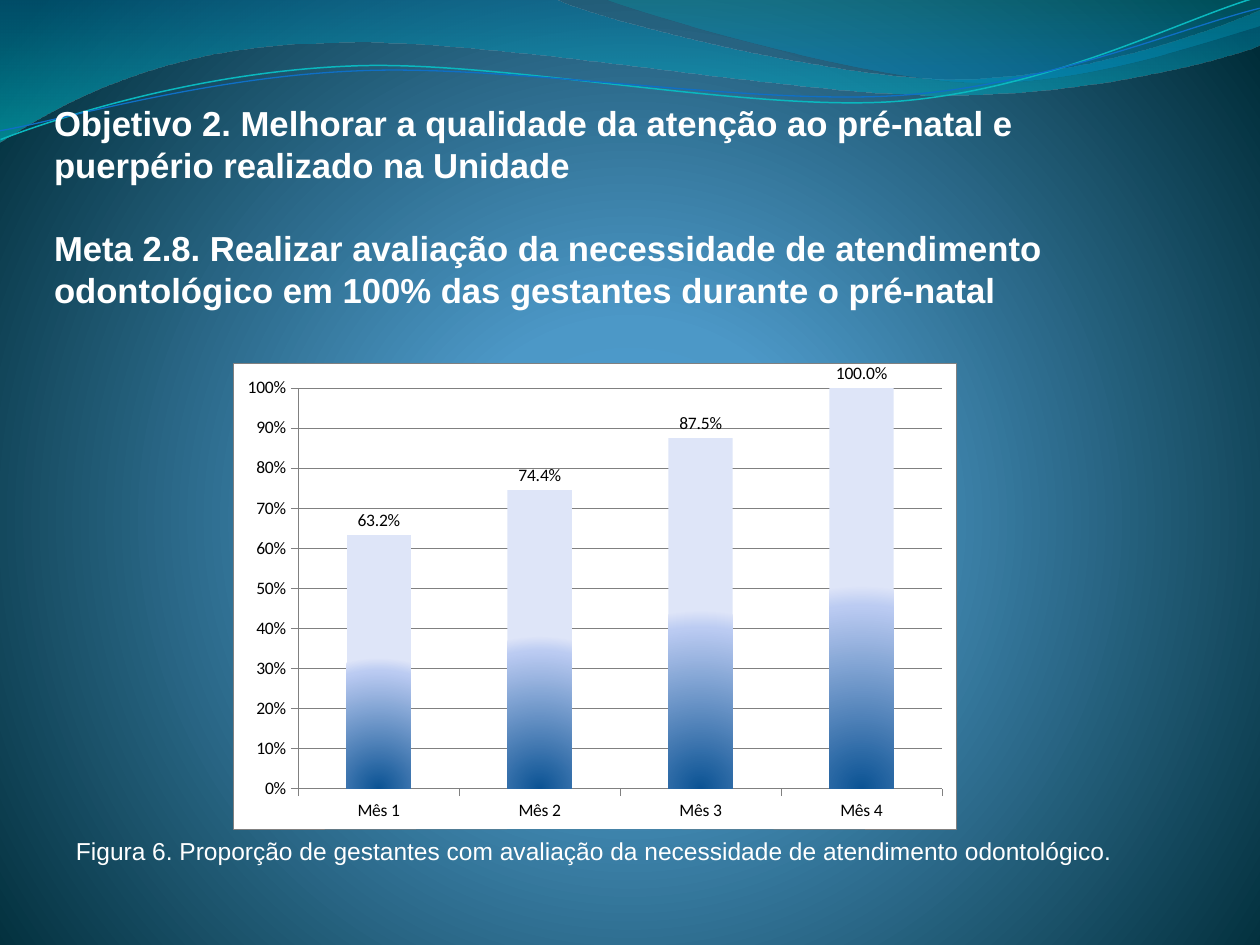
from lxml import etree
from pptx import Presentation
from pptx import util as u
from pptx.chart.data import CategoryChartData
from pptx.dml.color import RGBColor
from pptx.enum import chart as ch, text
from pptx.oxml import parse_xml
from pptx.oxml.ns import nsdecls, qn

WHITE = RGBColor(0xFF, 0xFF, 0xFF)
BLACK = RGBColor(0, 0, 0)
GRAY = RGBColor(0x80, 0x80, 0x80)
CYAN = RGBColor(0x0A, 0xB8, 0xBF)
BLUE = RGBColor(0x0F, 0x6F, 0xC6)

# Gradient stops: position %, colour, opacity %
BACKDROP = [(0, RGBColor(0x4A, 0xA0, 0xD6), 100), (25, RGBColor(0x4C, 0x98, 0xC7), 100),
            (100, RGBColor(0x00, 0x2C, 0x38), 100)]
LEFT_TINT = [(0, RGBColor(0x00, 0x74, 0xA1), 45), (100, RGBColor(0x00, 0xC6, 0xCF), 55)]
RIGHT_TINT = [(0, RGBColor(0x00, 0xA1, 0xA9), 30), (80, RGBColor(0x00, 0x8B, 0xBF), 45)]
BAR_TINT = [(0, RGBColor(0x0B, 0x53, 0x94), 100), (90, RGBColor(0xBB, 0xCB, 0xF2), 100),
            (100, RGBColor(0xDE, 0xE5, 0xF8), 100)]

# Outlines in px: pairs are straight steps, sextets are Bezier curves
LEFT_RIBBON = [(0, 0), (554, -1), (600, 21, 837, 79, 955, 79), (1075, 79, 1207, 33, 1260, 11),
               (1261, 45), (1239, 55, 1096, 96, 940, 95), (784, 95, 481, 35, 324, 43),
               (163, 45, 58, 105, -1, 142)]
RIGHT_RIBBON = [(604, -1), (641, 14, 859, 78, 969, 82), (1079, 87, 1211, 40, 1260, 26), (1260, 0)]
# Waves lie level here and are then tilted
CYAN_WAVE = [(-2, 110), (58, 90, 199, 52, 350, 53), (499, 53, 745, 118, 896, 114),
             (1049, 109, 1184, 45, 1260, 27)]
BLUE_WAVE = [(-2, 101), (57, 94, 207, 57, 357, 58), (509, 58, 750, 112, 902, 108),
             (1052, 104, 1188, 52, 1262, 38)]
WAVE_TILT = 357.3

HEADING = ["Objetivo 2. Melhorar a qualidade da atenção ao pré-natal e puerpério realizado na Unidade",
           "Meta 2.8. Realizar avaliação da necessidade de atendimento odontológico em 100% "
           "das gestantes durante o pré-natal"]
CAPTION = "Figura 6. Proporção de gestantes com avaliação da necessidade de atendimento odontológico."
PROPORTIONS = {"Mês 1": 0.632, "Mês 2": 0.744, "Mês 3": 0.875, "Mês 4": 1}


def px(n):
    return u.Emu(round(n * 914400 / 126))


def box(*lengths):
    return [px(n) for n in lengths]


def set_gradient(fill, stops, focus=None):
    """Top-down gradient, or circular around focus (left, top, right, bottom in %)."""
    fill.gradient()
    grad = fill._xPr.find(qn("a:gradFill"))
    stop_xml = "".join(
        f'<a:gs pos="{pos * 1000}"><a:srgbClr val="{color}"><a:alpha val="{alpha * 1000}"/>'
        "</a:srgbClr></a:gs>" for pos, color, alpha in stops)
    if focus:
        sides = " ".join(f'{side}="{v * 1000}"' for side, v in zip("ltrb", focus))
        shade = f'<a:path path="circle"><a:fillToRect {sides}/></a:path>'
    else:
        shade = '<a:lin ang="5400000" scaled="1"/>'
    new = parse_xml(f'<a:gradFill {nsdecls("a")} rotWithShape="1"><a:gsLst>{stop_xml}'
                    f"</a:gsLst>{shade}</a:gradFill>")
    grad.getparent().replace(grad, new)


def add_outline(slide, outline, close):
    """Freeform through the end points, with the curved steps bent afterwards."""
    anchors = [box(*step[-2:]) for step in outline]
    builder = slide.shapes.build_freeform(*anchors[0])
    builder.add_line_segments(anchors[1:], close=close)
    shape = builder.convert_to_shape()
    shape.shadow.inherit = False
    segments = list(shape._element.iter(qn("a:lnTo")))
    for segment, step in zip(segments, outline[1:]):
        if len(step) == 6:
            segment.tag = qn("a:cubicBezTo")
            for i, (x, y) in enumerate((step[:2], step[2:4])):
                control = etree.Element(qn("a:pt"), x=str(px(x) - shape.left),
                                        y=str(px(y) - shape.top))
                segment.insert(i, control)
    return shape


def add_ribbon(slide, outline, stops):
    ribbon = add_outline(slide, outline, True)
    set_gradient(ribbon.fill, stops)
    ribbon.line.fill.background()


def add_wave(slide, outline, color, width):
    wave = add_outline(slide, outline, False)
    wave.rotation = WAVE_TILT
    wave.fill.background()
    wave.line.color.rgb = color
    wave.line.width = u.Pt(width)


def write(frame, paragraphs, size, bold, insets):
    frame.word_wrap = True
    frame.auto_size = text.MSO_AUTO_SIZE.NONE
    frame.vertical_anchor = text.MSO_ANCHOR.TOP
    frame.margin_left, frame.margin_top, frame.margin_right, frame.margin_bottom = box(*insets)
    frame.text = "\n".join(paragraphs)
    for paragraph in frame.paragraphs:
        paragraph.alignment = text.PP_ALIGN.LEFT
        font = paragraph.runs[0].font
        font.name, font.size, font.bold = "Arial", u.Pt(size), bold
        font.color.rgb = WHITE


def add_heading(slide):
    heading = slide.shapes.title
    slide.shapes._spTree.append(heading._element)  # in front of the ribbons
    heading.left, heading.top, heading.width, heading.height = box(54, 102, 1082, 379)
    write(heading.text_frame, HEADING, 19.8, True, (0, 0, 3, 0))
    for paragraph in heading.text_frame.paragraphs:
        paragraph.line_spacing = u.Pt(23.8)
    heading.text_frame.paragraphs[1].space_before = u.Pt(23.8)


def add_caption(slide):
    caption = slide.shapes.add_textbox(*box(73, 829, 1082, 89))
    write(caption.text_frame, [CAPTION], 14, False, (3, 7, 3, 6))


def thin_line(line):
    line.color.rgb = GRAY
    line.width = u.Pt(0.25)


def frame_chart(chart):
    """White fills, grey border and a fixed inner plot area."""
    white = f'<a:solidFill><a:srgbClr val="{WHITE}"/></a:solidFill>'
    border = f'<a:ln w="3175"><a:solidFill><a:srgbClr val="{GRAY}"/></a:solidFill></a:ln>'
    names = nsdecls("c", "a")
    space = chart._chartSpace
    space.find(qn("c:txPr")).addprevious(parse_xml(f"<c:spPr {names}>{white}{border}</c:spPr>"))
    plot_area = space.chart.plotArea
    plot_area.append(parse_xml(f"<c:spPr {names}>{white}</c:spPr>"))
    for old in plot_area.findall(qn("c:layout")):
        plot_area.remove(old)
    layout = etree.Element(qn("c:layout"))
    manual = etree.SubElement(layout, qn("c:manualLayout"))
    for tag, value in (("layoutTarget", "inner"), ("xMode", "edge"), ("yMode", "edge"),
                       ("x", "0.09"), ("y", "0.053"), ("w", "0.891"), ("h", "0.861")):
        etree.SubElement(manual, qn(f"c:{tag}")).set("val", value)
    plot_area.insert(0, layout)


def add_proportions(slide):
    data = CategoryChartData()
    data.categories = list(PROPORTIONS)
    data.add_series("Series 1", list(PROPORTIONS.values()))
    chart = slide.shapes.add_chart(ch.XL_CHART_TYPE.COLUMN_CLUSTERED,
                                   *box(233, 363, 723, 466), data).chart
    chart.has_legend = chart.has_title = False
    chart.font.name, chart.font.size = "Calibri", u.Pt(10)
    chart.font.color.rgb = BLACK
    frame_chart(chart)
    # Axes
    for axis in (chart.category_axis, chart.value_axis):
        axis.major_tick_mark = ch.XL_TICK_MARK.OUTSIDE
        thin_line(axis.format.line)
    scale = chart.value_axis
    scale.minimum_scale, scale.maximum_scale, scale.major_unit = 0, 1, 0.1
    scale.tick_labels.number_format, scale.tick_labels.number_format_is_linked = "0%", False
    thin_line(scale.major_gridlines.format.line)
    # Columns and their labels
    plot = chart.plots[0]
    plot.gap_width, plot.vary_by_categories = 150, False
    set_gradient(plot.series[0].format.fill, BAR_TINT, (50, 100, 50, 0))
    plot.has_data_labels = True
    labels = plot.data_labels
    labels.show_value = True
    labels.number_format, labels.number_format_is_linked = "0.0%", False
    labels.position = ch.XL_LABEL_POSITION.OUTSIDE_END


def main():
    deck = Presentation()
    deck.slide_width, deck.slide_height = box(1260, 945)
    slide = deck.slides.add_slide(deck.slide_layouts[5])
    set_gradient(slide.background.fill, BACKDROP, (10, 110, 10, 100))
    # Decoration first, content in front
    add_ribbon(slide, LEFT_RIBBON, LEFT_TINT)
    add_ribbon(slide, RIGHT_RIBBON, RIGHT_TINT)
    add_wave(slide, CYAN_WAVE, CYAN, 0.85)
    add_wave(slide, BLUE_WAVE, BLUE, 0.75)
    add_heading(slide)
    add_caption(slide)
    add_proportions(slide)
    deck.save("out.pptx")


if __name__ == "__main__":
    main()
